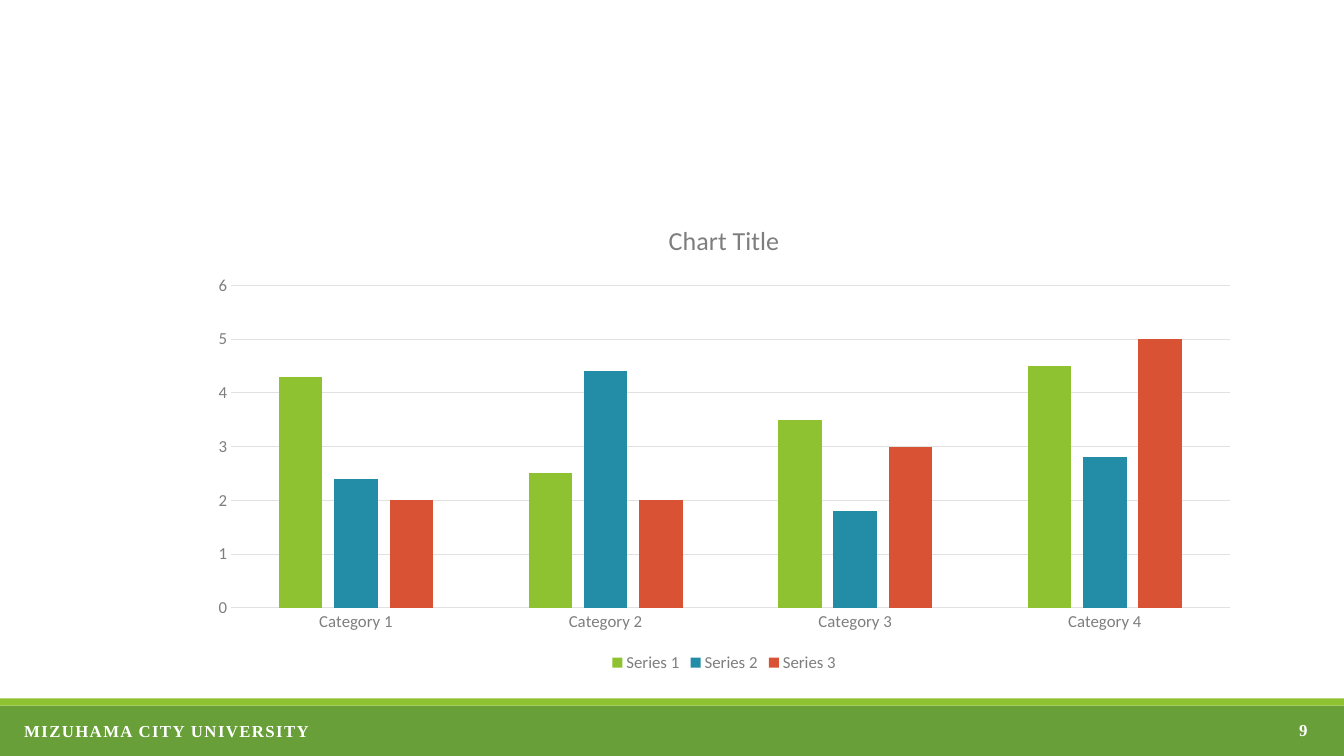
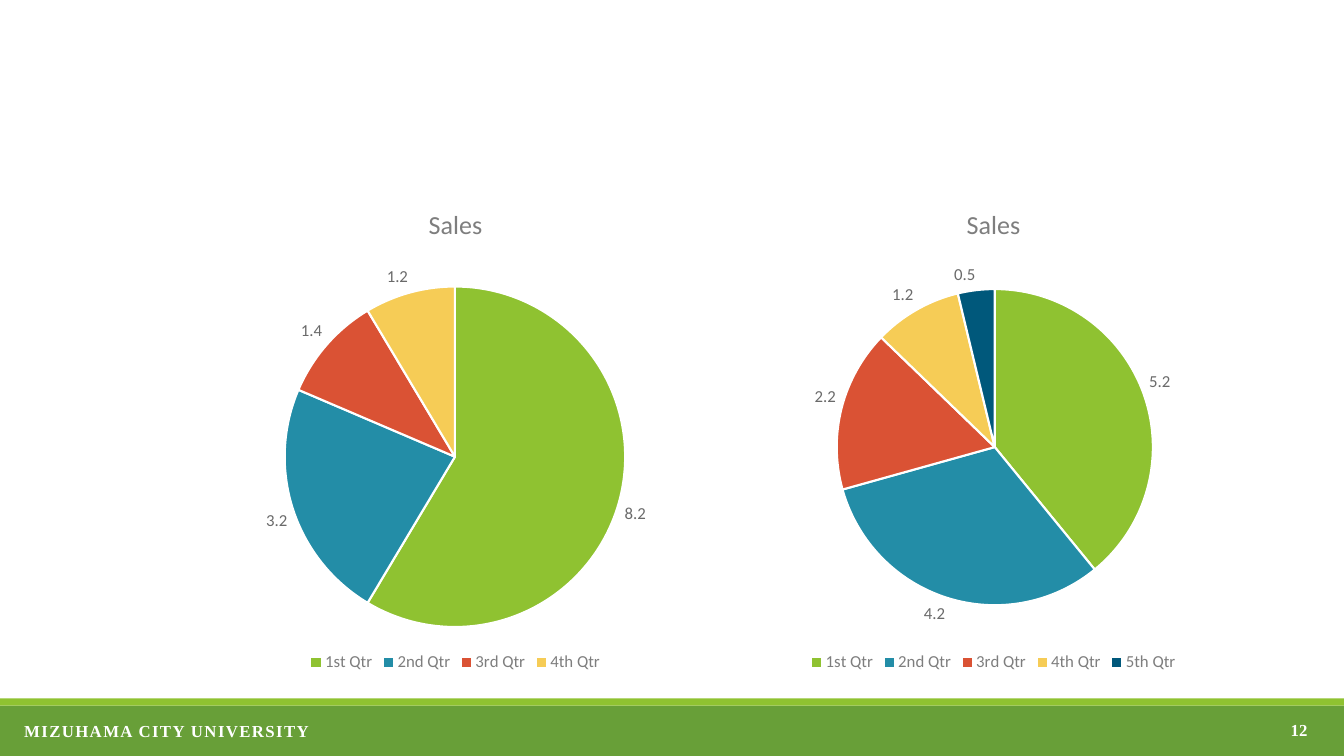
from dataclasses import dataclass

from pptx import Presentation
from pptx.chart.chart import Chart
from pptx.chart.data import CategoryChartData
from pptx.dml.color import RGBColor
from pptx.enum.chart import (
    XL_CHART_TYPE,
    XL_LABEL_POSITION,
    XL_LEGEND_POSITION,
    XL_TICK_MARK,
)
from pptx.enum.shapes import MSO_SHAPE
from pptx.enum.text import MSO_ANCHOR, PP_ALIGN
from pptx.slide import Slide
from pptx.text.text import Font
from pptx.util import Cm, Pt

GREEN = RGBColor(0x68, 0x9F, 0x38)
LIME = RGBColor(0x8F, 0xC2, 0x31)
TEAL = RGBColor(0x23, 0x8D, 0xA7)
RED = RGBColor(0xDA, 0x52, 0x34)
YELLOW = RGBColor(0xF6, 0xCC, 0x56)
NAVY = RGBColor(0x00, 0x58, 0x7B)
WHITE = RGBColor(0xFF, 0xFF, 0xFF)
GRID_GREY = RGBColor(0xE1, 0xE1, 0xE1)
TEXT_GREY = RGBColor(0x7E, 0x7E, 0x7E)
LABEL_GREY = RGBColor(0x6A, 0x6A, 0x6A)
DARK_GREY = RGBColor(0x38, 0x38, 0x38)
PALETTE = (LIME, TEAL, RED, YELLOW, NAVY)

CHART_FONT = "Calibri"
FOOTER_FONT = "Times New Roman"
ORGANISATION = "MIZUHAMA CITY UNIVERSITY"
PAGE_WIDTH, PAGE_HEIGHT = 33.87, 19.05


@dataclass(frozen=True)
class Frame:
    left: float
    top: float
    width: float
    height: float

    def lengths(self) -> tuple[Cm, Cm, Cm, Cm]:
        return Cm(self.left), Cm(self.top), Cm(self.width), Cm(self.height)


@dataclass(frozen=True)
class Band:
    frame: Frame
    color: RGBColor


@dataclass(frozen=True)
class FooterText:
    frame: Frame
    align: PP_ALIGN
    anchor: MSO_ANCHOR
    spacing: int = 0


@dataclass(frozen=True)
class ChartPlan:
    kind: XL_CHART_TYPE
    frame: Frame
    title: str
    categories: tuple[str, ...]
    series: dict[str, tuple[float, ...]]


@dataclass(frozen=True)
class PagePlan:
    number: int
    charts: tuple[ChartPlan, ...]


BANDS = (
    Band(Frame(0, 17.78, PAGE_WIDTH, 1.27), GREEN),
    Band(Frame(0, 17.6, PAGE_WIDTH, 0.18), LIME),
)
NAME_TEXT = FooterText(Frame(0.36, 18.03, 31.7, 0.77), PP_ALIGN.LEFT, MSO_ANCHOR.TOP, 100)
NUMBER_TEXT = FooterText(Frame(25.58, 17.88, 7.62, 1.02), PP_ALIGN.RIGHT, MSO_ANCHOR.MIDDLE)

QUARTERS = ("1st Qtr", "2nd Qtr", "3rd Qtr", "4th Qtr", "5th Qtr")
CHART_LEFT, PIE_WIDTH, PIE_GAP = 4.98, 13.0, 0.56


def pie_plan(column: int, values: tuple[float, ...]) -> ChartPlan:
    left = CHART_LEFT + column * (PIE_WIDTH + PIE_GAP)
    return ChartPlan(
        XL_CHART_TYPE.PIE,
        Frame(left, 4.7, PIE_WIDTH, 12.34),
        "Sales",
        QUARTERS[: len(values)],
        {"Sales": values},
    )


PAGES = (
    PagePlan(
        9,
        (
            ChartPlan(
                XL_CHART_TYPE.COLUMN_CLUSTERED,
                Frame(CHART_LEFT, 5.11, 26.54, 11.94),
                "Chart Title",
                tuple(f"Category {index}" for index in range(1, 5)),
                {
                    "Series 1": (4.3, 2.5, 3.5, 4.5),
                    "Series 2": (2.4, 4.4, 1.8, 2.8),
                    "Series 3": (2, 2, 3, 5),
                },
            ),
        ),
    ),
    PagePlan(
        12,
        (
            pie_plan(1, (5.2, 4.2, 2.2, 1.2, 0.5)),
            pie_plan(0, (8.2, 3.2, 1.4, 1.2)),
        ),
    ),
)


def style_font(font: Font, name: str, size: float, color: RGBColor, bold: bool = False) -> None:
    font.name = name
    font.size = Pt(size)
    font.bold = bold
    font.color.rgb = color


def add_band(page: Slide, band: Band) -> None:
    shape = page.shapes.add_shape(MSO_SHAPE.RECTANGLE, *band.frame.lengths())
    shape.shadow.inherit = False
    shape.fill.solid()
    shape.fill.fore_color.rgb = band.color
    shape.line.fill.background()


def add_footer_text(page: Slide, text: str, style: FooterText) -> None:
    box = page.shapes.add_textbox(*style.frame.lengths())
    box.text_frame.word_wrap = True
    box.text_frame.vertical_anchor = style.anchor
    para = box.text_frame.paragraphs[0]
    para.alignment = style.align
    style_font(para.font, FOOTER_FONT, 12, WHITE, bold=True)
    span = para.add_run()
    span.text = text
    if style.spacing:
        span.font._element.set("spc", str(style.spacing))


def style_columns(chart: Chart) -> None:
    plot = chart.plots[0]
    plot.vary_by_categories = False
    plot.gap_width = 219
    plot.overlap = -27
    for series, color in zip(plot.series, PALETTE):
        series.format.fill.solid()
        series.format.fill.fore_color.rgb = color
    for axis in (chart.category_axis, chart.value_axis):
        axis.major_tick_mark = XL_TICK_MARK.NONE
        axis.minor_tick_mark = XL_TICK_MARK.NONE
        style_font(axis.tick_labels.font, CHART_FONT, 12, TEXT_GREY)
    value_axis = chart.value_axis
    value_axis.minimum_scale, value_axis.maximum_scale = 0, 6
    value_axis.major_unit = 1
    value_axis.format.line.fill.background()
    for line in (chart.category_axis.format.line, value_axis.major_gridlines.format.line):
        line.color.rgb = GRID_GREY
        line.width = Pt(0.75)


def style_pie(chart: Chart) -> None:
    plot = chart.plots[0]
    plot.vary_by_categories = True
    series = plot.series[0]
    for index, color in enumerate(PALETTE[: len(series.values)]):
        wedge = series.points[index].format
        wedge.fill.solid()
        wedge.fill.fore_color.rgb = color
        wedge.line.color.rgb = WHITE
        wedge.line.width = Pt(1.5)
    labels = series.data_labels
    labels.show_value = True
    labels.position = XL_LABEL_POSITION.OUTSIDE_END
    style_font(labels.font, CHART_FONT, 12, LABEL_GREY)


def add_chart(page: Slide, plan: ChartPlan) -> None:
    data = CategoryChartData()
    data.categories = plan.categories
    for name, values in plan.series.items():
        data.add_series(name, values)
    chart = page.shapes.add_chart(plan.kind, *plan.frame.lengths(), data).chart
    style_font(chart.font, CHART_FONT, 10, DARK_GREY)
    chart.has_title = True
    chart.chart_title.include_in_layout = False
    para = chart.chart_title.text_frame.paragraphs[0]
    para.text = plan.title
    style_font(para.font, CHART_FONT, 18.6, TEXT_GREY)
    chart.has_legend = True
    chart.legend.position = XL_LEGEND_POSITION.BOTTOM
    chart.legend.include_in_layout = False
    style_font(chart.legend.font, CHART_FONT, 12, TEXT_GREY)
    if plan.kind == XL_CHART_TYPE.PIE:
        style_pie(chart)
    else:
        style_columns(chart)


def main() -> None:
    deck = Presentation()
    deck.slide_width, deck.slide_height = Cm(PAGE_WIDTH), Cm(PAGE_HEIGHT)
    for plan in PAGES:
        page = deck.slides.add_slide(deck.slide_layouts[6])
        for band in BANDS:
            add_band(page, band)
        add_footer_text(page, ORGANISATION, NAME_TEXT)
        add_footer_text(page, str(plan.number), NUMBER_TEXT)
        for chart_plan in plan.charts:
            add_chart(page, chart_plan)
    deck.save("out.pptx")


if __name__ == "__main__":
    main()
